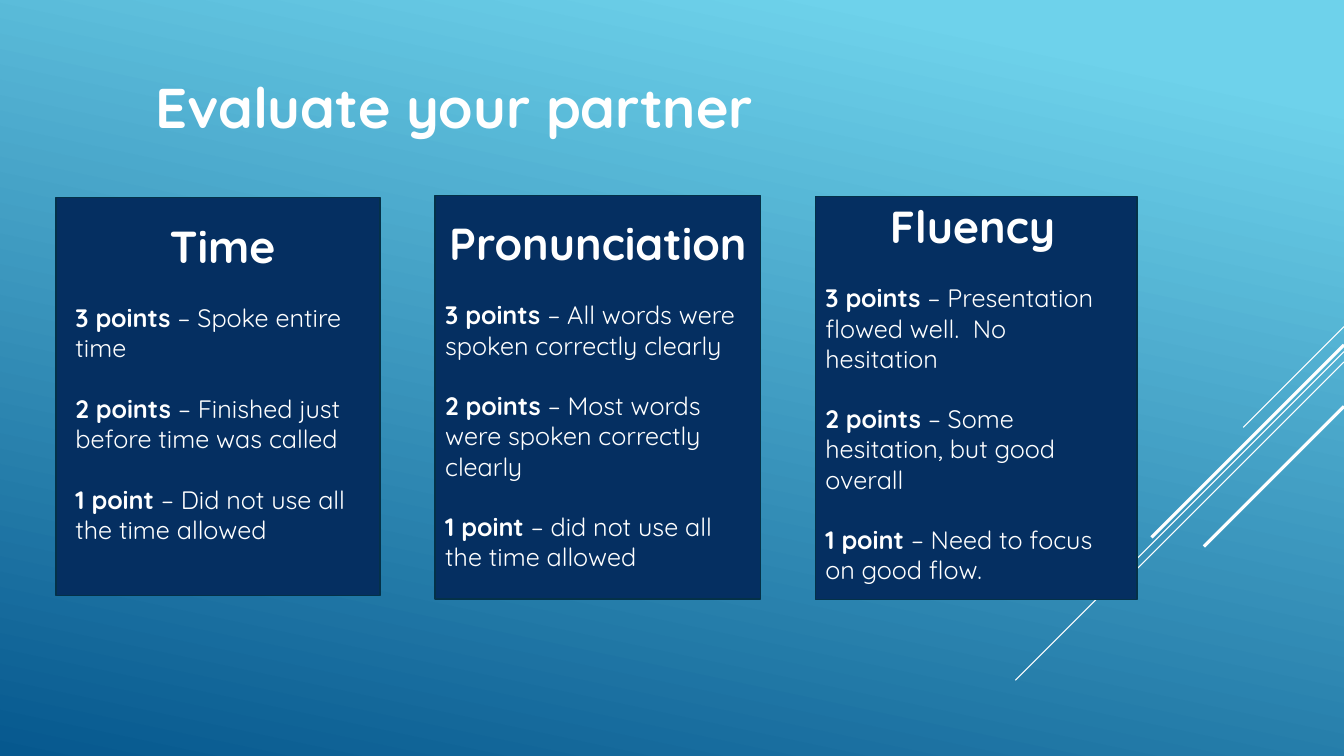
from lxml.etree import SubElement
from pptx import Presentation
from pptx.dml.color import RGBColor
from pptx.enum.shapes import MSO_CONNECTOR, MSO_SHAPE
from pptx.enum.text import MSO_AUTO_SIZE, PP_ALIGN
from pptx.oxml.ns import qn
from pptx.util import Cm, Pt

FONT = "Quicksand"
WHITE, NAVY, CARD_EDGE = "FFFFFF", "052F61", "043148"
SKY, DEEP_BLUE = "6ED2EB", "06588E"
SLIDE_WIDTH, SLIDE_HEIGHT = 33.87, 19.05
BODY_GAP = 21.6

TITLE = "Evaluate your partner"
TITLE_BOX = (3.68, 1.7, 27.15, 1.96)

# Panel and text boxes are (left, top, width, height) in cm
CRITERIA = [
    {
        "heading": "Time",
        "panel": (1.42, 4.98, 8.15, 10.03),
        "text": (1.65, 5.38, 7.92, 8.56),
        "scores": [
            ("3 points ", "– Spoke entire time"),
            ("2 points ", "– Finished just before time was called"),
            ("1 point ", "– Did not use all the time allowed"),
        ],
    },
    {
        "heading": "Pronunciation",
        "panel": (10.97, 4.93, 8.2, 10.16),
        "text": (10.97, 5.31, 8.2, 9.32),
        "scores": [
            ("3 points ", "– All words were spoken correctly clearly"),
            ("2 points ", "– Most words were spoken correctly clearly"),
            ("1 point ", "– did not use all the time allowed"),
        ],
    },
    {
        "heading": "Fluency",
        "panel": (20.55, 4.95, 8.1, 10.16),
        "text": (20.55, 4.88, 7.92, 10.08),
        "scores": [
            ("3 points ", "– Presentation flowed well.  No hesitation"),
            ("2 points ", "– Some hesitation, but good overall"),
            ("1 point ", "– Need to focus on good flow."),
        ],
    },
]

# Diagonal rays: height on the right edge (cm), horizontal run (cm), weight (pt)
RAYS = [
    (8.23, 2.54, 0.75),
    (8.86, 8.28, 0.75),
    (9.12, 5.26, 0.75),
    (8.69, 4.85, 2.25),
    (10.24, 3.53, 2.25),
]


def color(hex_code):
    return RGBColor.from_string(hex_code)


def style_run(run, size, bold):
    run.font.name = FONT
    run.font.size = Pt(size)
    run.font.bold = bold
    run.font.color.rgb = color(WHITE)


def add_text_frame(shapes, box):
    """Add a wrapping text box that grows with its text; return its frame."""
    frame = shapes.add_textbox(*map(Cm, box)).text_frame
    frame.word_wrap = True
    frame.auto_size = MSO_AUTO_SIZE.SHAPE_TO_FIT_TEXT
    return frame


def paint_background(slide):
    fill = slide.background.fill
    fill.gradient()
    fill.gradient_angle = 360 - 102
    for stop, hex_code, position in zip(fill.gradient_stops, (SKY, DEEP_BLUE), (0.1, 1)):
        stop.color.rgb = color(hex_code)
        stop.position = position


def add_ray(shapes, top, run, weight):
    """Add a line falling at 45 degrees from the right edge of the slide."""
    ray = shapes.add_connector(
        MSO_CONNECTOR.STRAIGHT,
        Cm(SLIDE_WIDTH), Cm(top), Cm(SLIDE_WIDTH - run), Cm(top + run),
    )
    ray.line.color.rgb = color(WHITE)
    ray.line.width = Pt(weight)
    SubElement(ray.element.spPr, qn("a:effectLst"))


def add_title(shapes):
    paragraph = add_text_frame(shapes, TITLE_BOX).paragraphs[0]
    paragraph.text = TITLE
    style_run(paragraph.runs[0], 40, True)


def add_criterion(shapes, criterion):
    card = shapes.add_group_shape().shapes
    panel = card.add_shape(MSO_SHAPE.RECTANGLE, *map(Cm, criterion["panel"]))
    panel.shadow.inherit = False
    panel.fill.solid()
    panel.fill.fore_color.rgb = color(NAVY)
    panel.line.color.rgb = color(CARD_EDGE)
    panel.line.width = Pt(1.25)

    frame = add_text_frame(card, criterion["text"])
    heading = frame.paragraphs[0]
    heading.text = criterion["heading"]
    heading.alignment = PP_ALIGN.CENTER
    style_run(heading.runs[0], 32, True)

    for score in criterion["scores"]:
        paragraph = frame.add_paragraph()
        paragraph.space_before = Pt(BODY_GAP)
        for words, bold in zip(score, (True, False)):
            run = paragraph.add_run()
            run.text = words
            style_run(run, 18, bold)


def main():
    deck = Presentation()
    deck.slide_width, deck.slide_height = Cm(SLIDE_WIDTH), Cm(SLIDE_HEIGHT)
    slide = deck.slides.add_slide(deck.slide_layouts[6])
    paint_background(slide)
    for ray in RAYS:
        add_ray(slide.shapes, *ray)
    add_title(slide.shapes)
    for criterion in CRITERIA:
        add_criterion(slide.shapes, criterion)
    deck.save("out.pptx")


if __name__ == "__main__":
    main()
